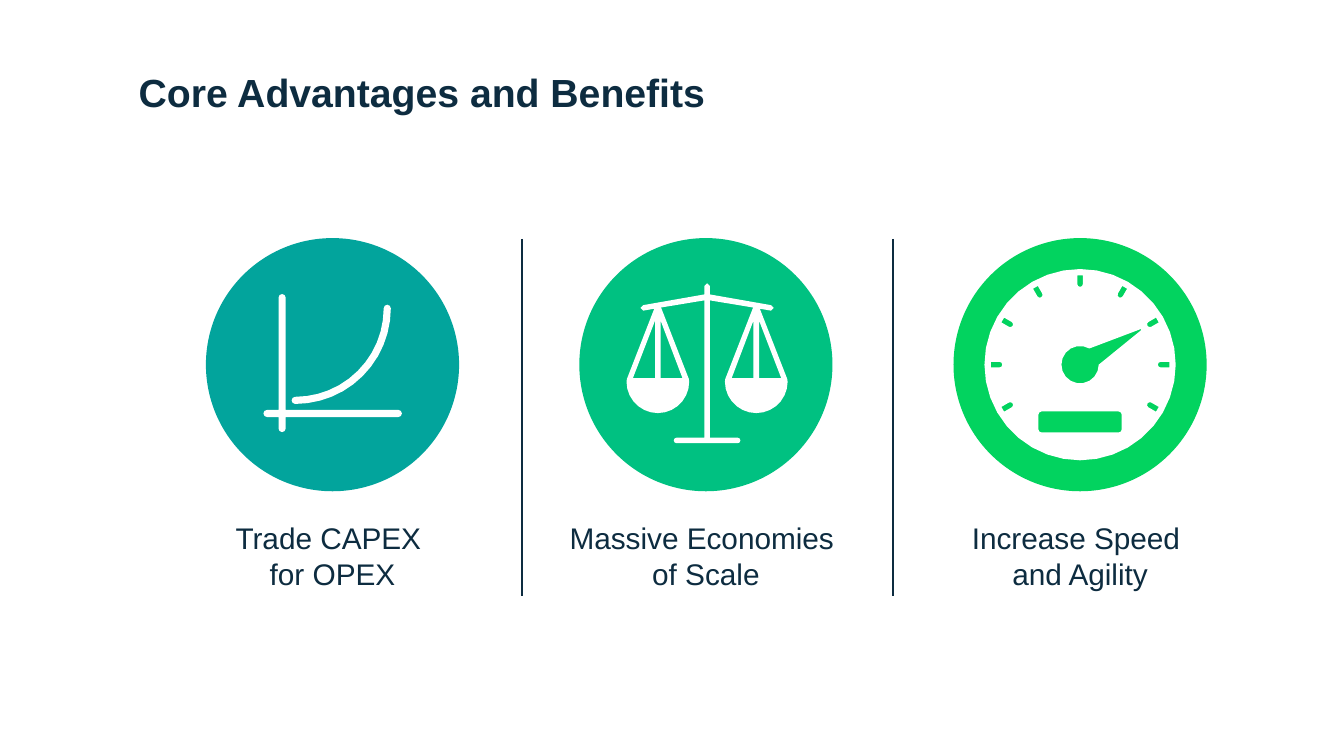
from math import cos, pi, sin

from lxml import etree
from pptx import Presentation
from pptx.dml.color import RGBColor
from pptx.enum.shapes import MSO_CONNECTOR, MSO_SHAPE
from pptx.enum.text import MSO_ANCHOR, MSO_AUTO_SIZE, PP_ALIGN
from pptx.oxml.ns import qn
from pptx.util import Cm, Pt

OVAL = MSO_SHAPE.OVAL
STRAIGHT = MSO_CONNECTOR.STRAIGHT
LEFT, CENTER = PP_ALIGN.LEFT, PP_ALIGN.CENTER
MIDDLE, TOP = MSO_ANCHOR.MIDDLE, MSO_ANCHOR.TOP
NO_FIT = MSO_AUTO_SIZE.NONE

FONT = "Arial"
COLORS = {
    "navy": "0D2C40",
    "white": "FFFFFF",
    "teal": "02A49C",
    "green": "00C181",
    "lime": "02D35F",
}
CENTERS = [8.38, 17.79, 27.22]  # columns, cm
CY, RADIUS = 9.19, 3.19


def arc(x, y, r, start, end, steps=4):
    """Points on an arc, angles in degrees, clockwise on the slide."""
    angles = [(start + (end - start) * i / steps) * pi / 180 for i in range(steps + 1)]
    return [(x + r * cos(a), y + r * sin(a)) for a in angles]


def turn(points, angle):
    c, n = cos(angle * pi / 180), sin(angle * pi / 180)
    return [(x * c - y * n, x * n + y * c) for x, y in points]


def mirror(points):
    return [(-x, y) for x, y in reversed(points)]


class Deck:
    """Style and current slide; positions are given in cm."""

    def __init__(self, s):
        self.s = s

    def color(self, name):
        return RGBColor.from_string(COLORS[name])

    def font(self, p, size, bold=False):
        p.font.name, p.font.size, p.font.bold = FONT, Pt(size), bold
        p.font.color.rgb = self.color("navy")

    def fill(self, sp, color):
        sp.shadow.inherit = False
        sp.fill.solid()
        sp.fill.fore_color.rgb = self.color(color)
        sp.line.fill.background()

    def title(self, text, x, y, w, h):
        sp = self.s.shapes.title
        sp.left, sp.top, sp.width, sp.height = Cm(x), Cm(y), Cm(w), Cm(h)
        tf = sp.text_frame
        tf.text, tf.auto_size, tf.vertical_anchor = text, NO_FIT, MIDDLE
        p = tf.paragraphs[0]
        p.alignment, p.line_spacing = LEFT, Pt(33.6)
        self.font(p, 28, bold=True)

    def label(self, text, x, y, w, h):
        tf = self.s.shapes.add_textbox(Cm(x), Cm(y), Cm(w), Cm(h)).text_frame
        tf.text, tf.word_wrap, tf.vertical_anchor = text, False, TOP
        for p in tf.paragraphs:
            p.alignment = CENTER
            self.font(p, 21.3)

    def disc(self, x, y, r, color):
        sp = self.s.shapes.add_shape(OVAL, Cm(x - r), Cm(y - r), Cm(2 * r), Cm(2 * r))
        self.fill(sp, color)

    def line(self, x1, y1, x2, y2, color, width):
        sp = self.s.shapes.add_connector(STRAIGHT, Cm(x1), Cm(y1), Cm(x2), Cm(y2))
        sp.line.color.rgb = self.color(color)
        sp.line.width = Pt(width)
        etree.SubElement(sp._element.spPr, qn("a:effectLst"))

    def icon(self, x, y, contours, color):
        """One shape from closed contours around (x, y); inner ones are holes."""
        builder = None
        for contour in contours:
            first, *rest = [(Cm(x + dx), Cm(y + dy)) for dx, dy in contour]
            if builder is None:
                builder = self.s.shapes.build_freeform(*first)
            else:
                builder.move_to(*first)
            builder.add_line_segments(rest, close=True)
        self.fill(builder.convert_to_shape(), color)


def growth_contours():
    t = 0.09  # half the stroke
    x, y = -1.27, 1.23  # where the axes cross
    axes = (
        arc(x, -1.69, t, 180, 360) + [(x + t, y - t)]
        + arc(1.66, y, t, 270, 450) + [(x + t, y + t)]
        + arc(x, 1.61, t, 0, 180) + [(x - t, y + t)]
        + arc(-1.65, y, t, 90, 270) + [(x - t, y - t)]
    )
    cx, cy, r = -0.94, -1.42, 2.32
    curve = (
        arc(cx, cy, r + t, 0, 90, 12) + arc(cx, cy + r, t, 90, 270)
        + arc(cx, cy, r - t, 90, 0, 12) + arc(cx + r, cy, t, 180, 360)
    )
    return [axes, curve]


def scales_contours():
    # Right half, from the top of the mast down to its foot
    half = (
        [(0, -2.05), (0.07, -1.98), (0.07, -1.77)]
        + [(1.61, -1.5), (1.68, -1.43), (1.61, -1.36), (1.33, -1.41), (2.02, 0.36)]
        + arc(1.24, 0.43, 0.79, 0, 180, 14)
        + [(0.46, 0.36), (1.16, -1.44), (0.07, -1.62), (0.07, 1.84)]
        + arc(0.77, 1.91, 0.07, 270, 450)
    )
    holes = [
        [(0.62, 0.34), (1.17, -1.11), (1.17, 0.34)],
        [(1.31, -1.11), (1.87, 0.34), (1.31, 0.34)],
    ]
    contours = [half + mirror(half)] + holes + [mirror(hole) for hole in holes]
    return [[(x + 0.03, y) for x, y in contour] for contour in contours]


def gauge_contours():
    dial = arc(0, 0, 2.41, 0, 350, 35)
    # Ticks: flat outside, round inside
    tick = [(2.25, -0.07), (2.25, 0.07)] + arc(2.03, 0, 0.07, 90, 270)
    ticks = [turn(tick, angle) for angle in range(150, 391, 30)]
    needle = arc(0, 0, 0.47, 0, 300, 15) + [(1.54, -0.9), (1.54, -0.87)]
    corners = [(0.97, 1.63), (-0.97, 1.63), (-0.97, 1.26), (0.97, 1.26)]
    display = []
    for i, (x, y) in enumerate(corners):
        display += arc(x, y, 0.08, 90 * i, 90 * i + 90, 2)
    return [dial, *ticks, needle, display]


def main():
    prs = Presentation()
    prs.slide_width, prs.slide_height = Cm(33.87), Cm(19.05)
    deck = Deck(prs.slides.add_slide(prs.slide_layouts[5]))
    deck.title("Core Advantages and Benefits", 3.24, 1.6, 28.3, 1.45)

    # Benefits: disc, icon and label
    benefits = [
        ("Trade CAPEX \nfor OPEX", "teal", growth_contours()),
        ("Massive Economies \nof Scale", "green", scales_contours()),
        ("Increase Speed \nand Agility", "lime", gauge_contours()),
    ]
    for x, (text, color, contours) in zip(CENTERS, benefits):
        deck.disc(x, CY, RADIUS, color)
        deck.icon(x, CY, contours, "white")
        deck.label(text, x - 3.86, 12.98, 7.72, 3.23)

    # Column dividers
    for x in (13.16, 22.51):
        deck.line(x, 6.02, x, 15.01, "navy", 1.5)

    prs.save("out.pptx")


if __name__ == "__main__":
    main()
